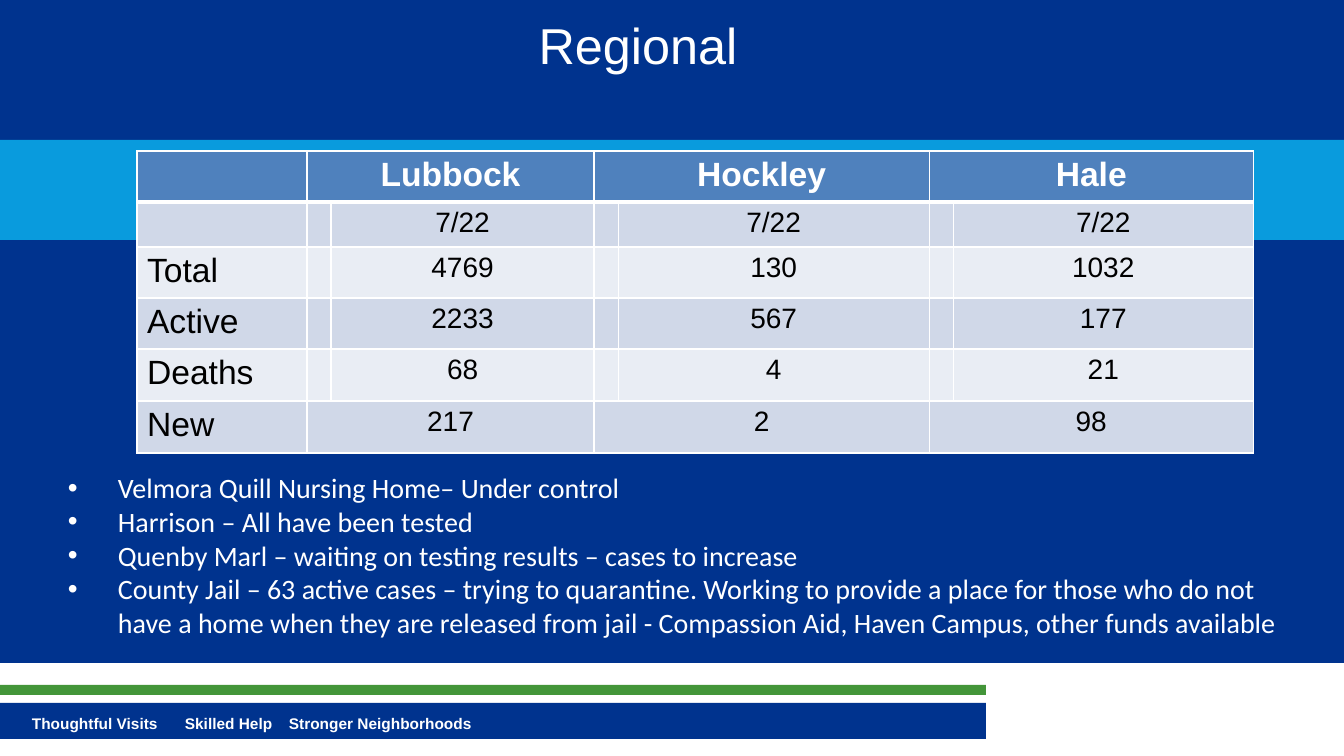
from lxml.etree import SubElement
from pptx import Presentation
from pptx.dml.color import RGBColor
from pptx.enum.shapes import MSO_SHAPE
from pptx.enum.text import MSO_ANCHOR, PP_ALIGN
from pptx.oxml.ns import qn
from pptx.util import Pt

NAVY = RGBColor(0x00, 0x33, 0x8E)
SKY = RGBColor(0x09, 0x9B, 0xDD)
GREEN = RGBColor(0x43, 0x95, 0x39)
HEADER_BLUE = RGBColor(0x4F, 0x81, 0xBD)
DARK_ROW = RGBColor(0xD0, 0xD8, 0xE8)
LIGHT_ROW = RGBColor(0xE9, 0xED, 0xF4)
WHITE = RGBColor(0xFF, 0xFF, 0xFF)
BLACK = RGBColor(0x00, 0x00, 0x00)

TITLE = "Regional"
COUNTIES = ["Lubbock", "Hockley", "Hale"]
COUNTS = [
    ("", ["7/22", "7/22", "7/22"]),
    ("Total", ["4769", "130", "1032"]),
    ("Active", ["2233", "567", "177"]),
    ("Deaths", ["68", "4", "21"]),
    ("New", ["217", "2", "98"]),
]
NOTES = [
    "Velmora Quill Nursing Home– Under control",
    "Harrison – All have been tested",
    "Quenby Marl – waiting on testing results – cases to increase",
    "County Jail – 63 active cases – trying to quarantine. Working to provide a place "
    "for those who do not have a home when they are released from jail "
    "- Compassion Aid, Haven Campus, other funds available",
]
VALUES = ["Thoughtful Visits", "Skilled Help", "Stronger Neighborhoods"]

# left, top, width, height in px
BANDS = [
    ((0, 0, 1344, 663), NAVY),
    ((-3, 703, 989, 36), NAVY),
    ((-3, 685, 989, 10), GREEN),
    ((0, 140, 1344, 100), SKY),
]
TITLE_BOX = (58, 3, 1160, 152)
TABLE_CORNER = (137, 151)
COLUMN_WIDTHS = [170, 24, 263, 24, 311, 24, 300]
ROW_HEIGHTS = [51, 45, 51, 51, 52, 52]
NOTES_BOX = (58, 466, 1230, 179)
NOTES_INDENT = 50
VALUES_BOX = (22, 709, 840, 29)
VALUES_TABS = [153, 257]

TITLE_FONT = {"name": "Arial", "size": Pt(36), "bold": False}
HEADER_FONT = {"name": "Arial", "size": Pt(24), "bold": True}
LABEL_FONT = {"name": "Arial", "size": Pt(24), "bold": False}
COUNT_FONT = {"name": "Arial", "size": Pt(20), "bold": False}
NOTES_FONT = {"name": "Calibri", "size": Pt(20), "bold": False}
VALUES_FONT = {"name": "Arial", "size": Pt(11), "bold": True}


def px(length):
    return round(length * 914400 / 100.8)


def write(para, text, style, color, align=PP_ALIGN.LEFT):
    para.alignment = align
    span = para.add_run()
    span.text = text
    for key, value in style.items():
        setattr(span.font, key, value)
    span.font.color.rgb = color


def add_text_frame(page, area):
    frame = page.shapes.add_textbox(*map(px, area)).text_frame
    frame.word_wrap = True
    return frame


def add_bands(page):
    for area, color in BANDS:
        band = page.shapes.add_shape(MSO_SHAPE.RECTANGLE, *map(px, area))
        band.shadow.inherit = False
        band.fill.solid()
        band.fill.fore_color.rgb = color
        band.line.fill.background()


def place_title(page):
    """Fill the title placeholder and bring it in front of the bands."""
    title = page.shapes.title
    title.left, title.top, title.width, title.height = map(px, TITLE_BOX)
    frame = title.text_frame
    frame.word_wrap = True
    frame.vertical_anchor = MSO_ANCHOR.TOP
    frame.margin_top = px(11)
    write(frame.paragraphs[0], TITLE, TITLE_FONT, WHITE, PP_ALIGN.CENTER)
    title.element.getparent().append(title.element)


def draw_borders(cell, row):
    """White 1 pt edges, with a 3 pt rule below the header row."""
    widths = {"L": 1, "R": 1, "T": 3 if row == 1 else 1, "B": 3 if row == 0 else 1}
    properties = cell._tc.get_or_add_tcPr()
    for side, width in widths.items():
        edge = SubElement(properties, qn(f"a:ln{side}"), w=str(Pt(width)))
        fill = SubElement(edge, qn("a:solidFill"))
        SubElement(fill, qn("a:srgbClr"), val=str(WHITE))


def add_counts_table(page):
    size = (sum(COLUMN_WIDTHS), sum(ROW_HEIGHTS))
    table = page.shapes.add_table(
        len(ROW_HEIGHTS), len(COLUMN_WIDTHS), *map(px, TABLE_CORNER + size)).table
    for column, width in zip(table.columns, COLUMN_WIDTHS):
        column.width = px(width)
    last = len(COUNTS)
    for index, (label, counts) in enumerate([("", COUNTIES)] + COUNTS):
        table.rows[index].height = px(ROW_HEIGHTS[index])
        header = index == 0
        shade = HEADER_BLUE if header else DARK_ROW if index % 2 else LIGHT_ROW
        for cell in table.rows[index].cells:
            draw_borders(cell, index)
            cell.fill.solid()
            cell.fill.fore_color.rgb = shade
        if label:
            write(table.cell(index, 0).text_frame.paragraphs[0], label, LABEL_FONT, BLACK)
        style, color = (HEADER_FONT, WHITE) if header else (COUNT_FONT, BLACK)
        for county, count in enumerate(counts):
            narrow, wide = 2 * county + 1, 2 * county + 2
            cell = table.cell(index, wide)
            if index in (0, last):
                cell = table.cell(index, narrow)
                cell.merge(table.cell(index, wide))
            write(cell.text_frame.paragraphs[0], count, style, color, PP_ALIGN.CENTER)


def add_notes(page):
    frame = add_text_frame(page, NOTES_BOX)
    for index, note in enumerate(NOTES):
        para = frame.add_paragraph() if index else frame.paragraphs[0]
        properties = para._p.get_or_add_pPr()
        properties.set("marL", str(px(NOTES_INDENT)))
        properties.set("indent", str(-px(NOTES_INDENT)))
        SubElement(properties, qn("a:buFont"), typeface="Arial")
        SubElement(properties, qn("a:buChar"), char="•")
        write(para, note, NOTES_FONT, WHITE)


def add_values(page):
    para = add_text_frame(page, VALUES_BOX).paragraphs[0]
    stops = SubElement(para._p.get_or_add_pPr(), qn("a:tabLst"))
    for stop in VALUES_TABS:
        SubElement(stops, qn("a:tab"), pos=str(px(stop)), algn="l")
    write(para, "\t".join(VALUES), VALUES_FONT, WHITE)


def main():
    deck = Presentation()
    deck.slide_width, deck.slide_height = px(1344), px(756)
    page = deck.slides.add_slide(deck.slide_layouts[5])
    add_bands(page)
    place_title(page)
    add_counts_table(page)
    add_notes(page)
    add_values(page)
    deck.save("out.pptx")


if __name__ == "__main__":
    main()
